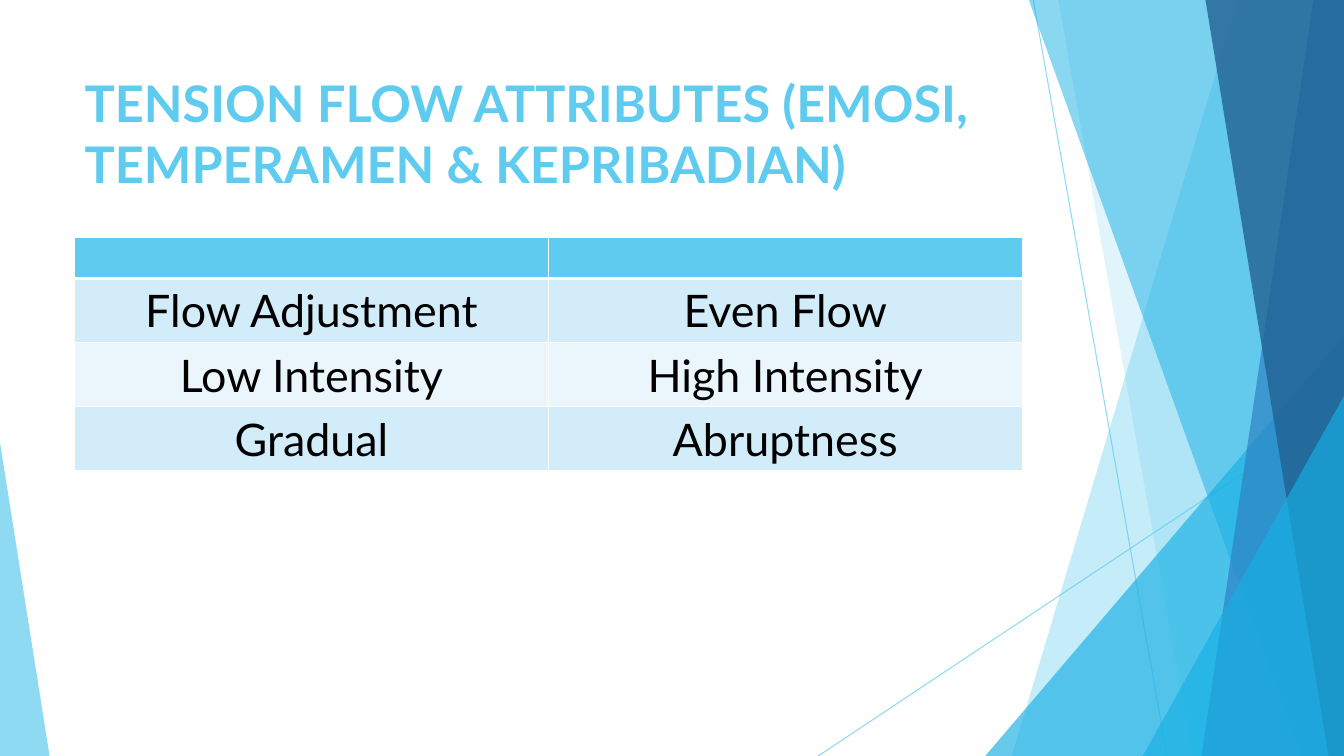
from dataclasses import dataclass
from lxml.etree import SubElement
from pptx import Presentation
from pptx.dml.color import RGBColor
from pptx.enum.shapes import MSO_CONNECTOR, MSO_SHAPE
from pptx.enum.text import MSO_ANCHOR, MSO_AUTO_SIZE, PP_ALIGN
from pptx.oxml.ns import qn
from pptx.util import Cm, Pt


@dataclass(frozen=True)
class Theme:
    font: str = "Lato"
    title_size: int = 36
    cell_size: int = 32
    sky: str = "5FCBEF"
    azure: str = "17B0E4"
    blue: str = "2E83C3"
    navy: str = "226292"
    band_dark: str = "D2ECF9"
    band_light: str = "EAF6FC"
    text: str = "000000"
    border: str = "FFFFFF"


def paint(fill, color, opacity=100):
    fill.solid()
    fill.fore_color.rgb = RGBColor.from_string(color)
    if opacity < 100:
        clr = fill._xPr.find(qn("a:solidFill"))[0]
        SubElement(clr, qn("a:alpha")).set("val", str(opacity * 1000))


def style_text(p, size, color, bold=False):
    for r in p.runs:
        r.font.name = theme.font
        r.font.size = Pt(size)
        r.font.bold = bold
        r.font.color.rgb = RGBColor.from_string(color)


theme = Theme()
W, H = 33.87, 19.05
prs = Presentation()
prs.slide_width, prs.slide_height = Cm(W), Cm(H)
slide = prs.slides.add_slide(prs.slide_layouts[5])
shapes = slide.shapes

for x1, y1, x2, y2 in [(26.04, 0, 29.41, H), (W, 10.24, 20.62, H)]:
    ln = shapes.add_connector(MSO_CONNECTOR.STRAIGHT, Cm(x1), Cm(y1), Cm(x2), Cm(y2))
    ln.line.width = Pt(0.75)
    paint(ln.line.fill, theme.sky, 70)
    SubElement(ln._element.spPr, qn("a:effectLst"))

facets = [
    ("panel", 31.19, 25.5, theme.sky, 36),
    ("panel", 26.67, 30.05, theme.sky, 20),
    ("right", 9.04, 10.59, theme.azure, 66),
    ("panel", 25.93, 32.79, theme.azure, 50),
    ("panel", 33.1, 30.28, theme.blue, 70),
    ("panel", 30.38, 33.48, theme.navy, 80),
    ("right", 5.07, 9.07, theme.azure, 66),
    ("left", 1.25, 7.9, theme.sky, 70),
]
for kind, a, b, color, opacity in facets:
    if kind == "panel":
        fb = shapes.build_freeform(Cm(a), 0)
        fb.add_line_segments([(Cm(W), 0), (Cm(W), Cm(H)), (Cm(b), Cm(H))])
        sp = fb.convert_to_shape()
    else:
        x = W - a if kind == "right" else 0
        sp = shapes.add_shape(MSO_SHAPE.ISOSCELES_TRIANGLE, Cm(x), Cm(H - b), Cm(a), Cm(b))
        sp.adjustments[0] = 1 if kind == "right" else 0
    paint(sp.fill, color, opacity)
    sp.line.fill.background()
    sp.shadow.inherit = False

title = shapes.title
title.left, title.top, title.width, title.height = Cm(1.88), Cm(1.7), Cm(23.88), Cm(3.66)
tf = title.text_frame
tf.text = "TENSION FLOW ATTRIBUTES (EMOSI, TEMPERAMEN & KEPRIBADIAN)"
tf.word_wrap = True
tf.auto_size = MSO_AUTO_SIZE.NONE
tf.vertical_anchor = MSO_ANCHOR.TOP
p = tf.paragraphs[0]
p.alignment = PP_ALIGN.LEFT
style_text(p, theme.title_size, theme.sky, bold=True)

rows = [
    ("", ""),
    ("Flow Adjustment", "Even Flow"),
    ("Low Intensity", "High Intensity"),
    ("Gradual", "Abruptness"),
]
row_fills = [theme.sky, theme.band_dark, theme.band_light, theme.band_dark]
heights = [1.03] + [1.61] * 3
table = shapes.add_table(4, 2, Cm(1.88), Cm(5.99), Cm(23.88), Cm(sum(heights))).table
for i, row in enumerate(rows):
    table.rows[i].height = Cm(heights[i])
    for j, text in enumerate(row):
        cell = table.cell(i, j)
        tcPr = cell._tc.get_or_add_tcPr()
        for side in "LRTB":
            thick = (i, side) in [(0, "B"), (1, "T")]
            ln = SubElement(tcPr, qn("a:ln" + side), w=str(Pt(3 if thick else 1)))
            SubElement(SubElement(ln, qn("a:solidFill")), qn("a:srgbClr"), val=theme.border)
        paint(cell.fill, row_fills[i])
        if text:
            cell.text_frame.text = text
            p = cell.text_frame.paragraphs[0]
            p.alignment = PP_ALIGN.CENTER
            style_text(p, theme.cell_size, theme.text)

prs.save("out.pptx")
